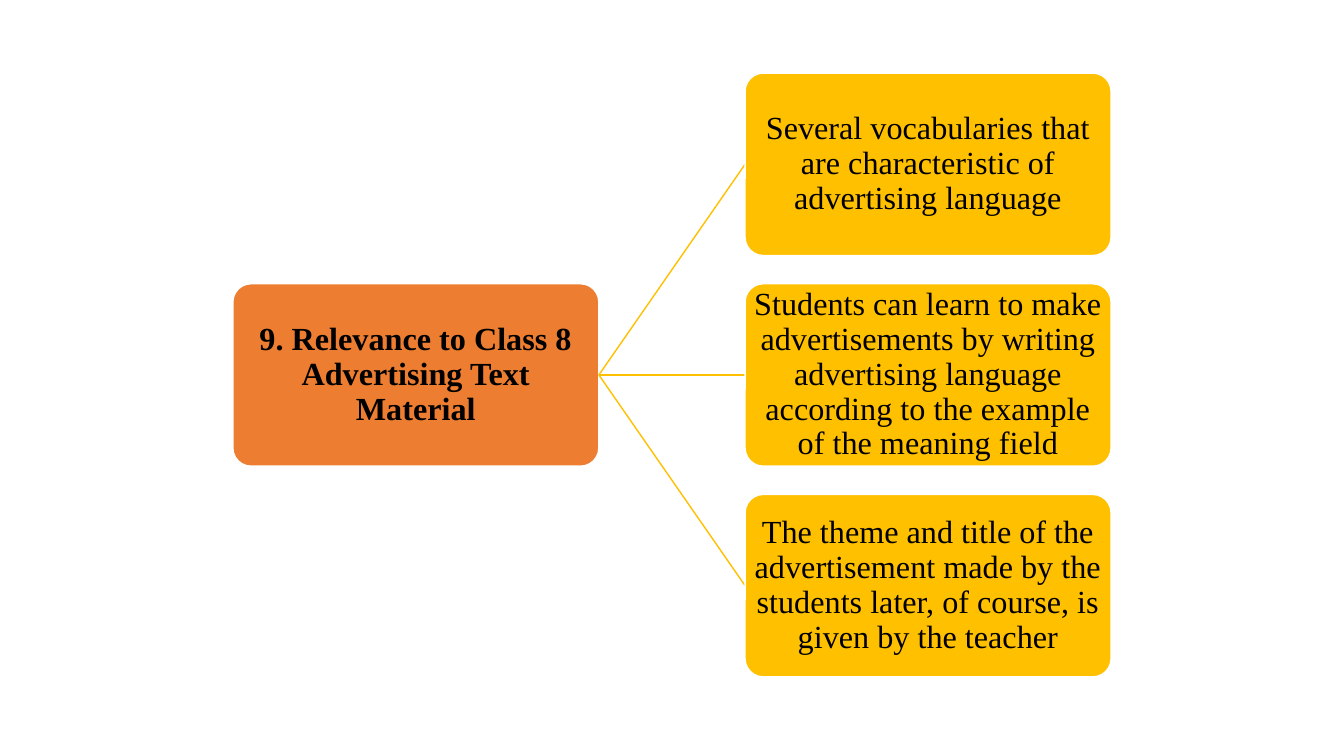
from lxml.etree import SubElement
from pptx import Presentation
from pptx.dml.color import RGBColor
from pptx.enum.shapes import MSO_CONNECTOR as Connector, MSO_SHAPE as Shape
from pptx.enum.text import MSO_ANCHOR as Anchor, PP_ALIGN as Align
from pptx.oxml.ns import qn
from pptx.util import Inches, Pt

TOPIC = "9. Relevance to Class 8 Advertising Text Material"
POINTS = [
    "Several vocabularies that are characteristic of advertising language",
    "Students can learn to make advertisements by writing advertising language "
    "according to the example of the meaning field",
    "The theme and title of the advertisement made by the students later, "
    "of course, is given by the teacher",
]

ORANGE = RGBColor(0xED, 0x7D, 0x31)
GOLD = RGBColor(0xFF, 0xC0, 0x00)
WHITE = RGBColor(0xFF, 0xFF, 0xFF)
BLACK = RGBColor(0x00, 0x00, 0x00)

SLIDE_WIDTH, SLIDE_HEIGHT = 13.33, 7.5
BOX_WIDTH, BOX_HEIGHT = 3.63, 1.81
COLUMN_GAP, ROW_GAP = 1.45, 0.28
LEFT, MIDDLE = 2.31, 3.72
POINT_LEFT = LEFT + BOX_WIDTH + COLUMN_GAP


def add_box(slide, text, left, center, color, bold=False):
    """Add a rounded box with centred text around a vertical centre."""
    box = slide.shapes.add_shape(
        Shape.ROUNDED_RECTANGLE, Inches(left), Inches(center - BOX_HEIGHT / 2),
        Inches(BOX_WIDTH), Inches(BOX_HEIGHT))
    box.adjustments[0] = 0.1
    box.shadow.inherit = False
    box.fill.solid()
    box.fill.fore_color.rgb = color
    box.line.color.rgb = WHITE
    box.line.width = Pt(1)
    frame = box.text_frame
    frame.word_wrap = True
    frame.vertical_anchor = Anchor.MIDDLE
    frame.margin_left = frame.margin_right = Inches(0.02)
    frame.margin_top = frame.margin_bottom = Inches(0.02)
    paragraph = frame.paragraphs[0]
    paragraph.text = text
    paragraph.alignment = Align.CENTER
    paragraph.line_spacing = 0.9
    font = paragraph.font
    font.name, font.size, font.bold = "Times New Roman", Pt(23), bold
    font.color.rgb = BLACK


def add_branch(slide, center):
    """Draw a line from the topic box to a point box."""
    branch = slide.shapes.add_connector(
        Connector.STRAIGHT, Inches(LEFT + BOX_WIDTH), Inches(MIDDLE),
        Inches(POINT_LEFT), Inches(center))
    branch.line.color.rgb = GOLD
    branch.line.width = Pt(1)
    SubElement(branch._element.spPr, qn("a:effectLst"))


def main():
    """Build the slide and save it."""
    presentation = Presentation()
    presentation.slide_width = Inches(SLIDE_WIDTH)
    presentation.slide_height = Inches(SLIDE_HEIGHT)
    slide = presentation.slides.add_slide(presentation.slide_layouts[6])
    add_box(slide, TOPIC, LEFT, MIDDLE, ORANGE, bold=True)
    for row, text in enumerate(POINTS):
        center = MIDDLE + (row - (len(POINTS) - 1) / 2) * (BOX_HEIGHT + ROW_GAP)
        add_branch(slide, center)
        add_box(slide, text, POINT_LEFT, center, GOLD)
    presentation.save("out.pptx")


if __name__ == "__main__":
    main()
